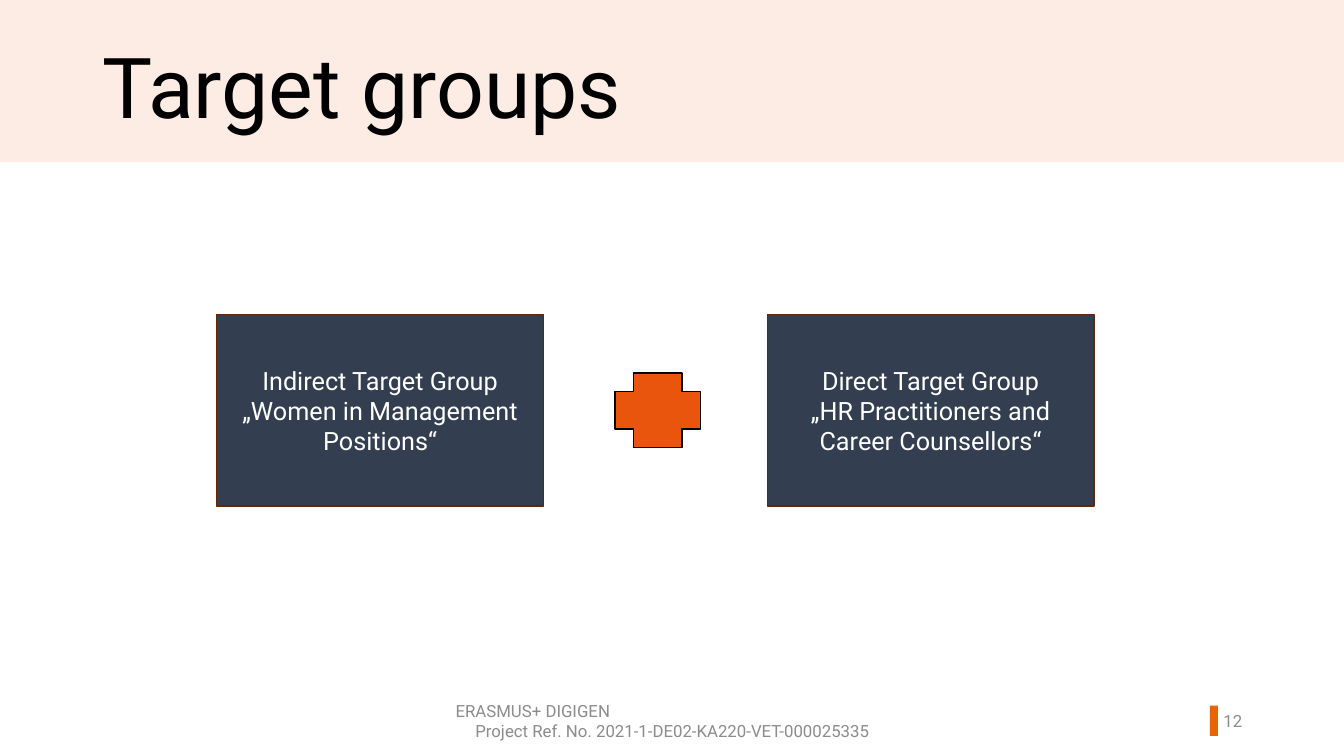
from pptx import Presentation
from pptx.dml.color import RGBColor
from pptx.enum.shapes import MSO_SHAPE
from pptx.enum.text import MSO_ANCHOR, MSO_AUTO_SIZE, PP_ALIGN
from pptx.util import Inches, Pt

RECT, PLUS = MSO_SHAPE.RECTANGLE, MSO_SHAPE.CROSS
TOP, MIDDLE = MSO_ANCHOR.TOP, MSO_ANCHOR.MIDDLE
LEFT, CENTER, RIGHT = PP_ALIGN.LEFT, PP_ALIGN.CENTER, PP_ALIGN.RIGHT
FIXED = MSO_AUTO_SIZE.NONE
FONT = "Roboto"
COLORS = {
    "band": "FDECE3", "mark": "E86507", "gray": "8C8C8C", "black": "000000",
    "white": "FFFFFF", "navy": "333F50", "brown": "662506", "plus": "E9550D",
}


def color(name):
    return RGBColor.from_string(COLORS[name])


def write(frame, lines, size, tint, anchor=MIDDLE):
    """Fill a text frame with one paragraph per (text, alignment) pair."""
    frame.word_wrap = True
    frame.auto_size = FIXED
    frame.vertical_anchor = anchor
    for i, (text, align) in enumerate(lines):
        para = frame.paragraphs[0] if i == 0 else frame.add_paragraph()
        para.alignment = align
        run = para.add_run()
        run.text = text
        run.font.name = FONT
        run.font.size = Pt(size)
        run.font.color.rgb = color(tint)


def add_shape(slide, kind, box, fill, line=None):
    shape = slide.shapes.add_shape(kind, *map(Inches, box))
    shape.shadow.inherit = False
    shape.fill.solid()
    shape.fill.fore_color.rgb = color(fill)
    if line:
        shape.line.color.rgb = color(line)
        shape.line.width = Pt(1)
    else:
        shape.line.fill.background()
    return shape


def add_title(slide, text):
    title = slide.shapes.title
    title.left, title.top = Inches(0.92), Inches(0.41)
    title.width, title.height = Inches(9.93), Inches(0.85)
    write(title.text_frame, [(text, LEFT)], 60, "black", TOP)
    title.text_frame.paragraphs[0].line_spacing = 0.9


def add_note(slide, box, lines):
    note = slide.shapes.add_textbox(*map(Inches, box))
    write(note.text_frame, lines, 12, "gray")


def add_group(slide, left, lines):
    card = add_shape(slide, RECT, (left, 3.12, 3.24, 1.9), "navy", "brown")
    write(card.text_frame, [(line, CENTER) for line in lines], 18, "white")


def main():
    deck = Presentation()
    deck.slide_width, deck.slide_height = Inches(13.33), Inches(7.5)
    slide = deck.slides.add_slide(deck.slide_layouts[5])

    band = add_shape(slide, RECT, (0, 0, 13.33, 1.61), "band")
    slide.shapes.title.element.addprevious(band.element)
    add_title(slide, "Target groups")

    add_shape(slide, RECT, (12, 7, 0.08, 0.3), "mark")
    add_note(slide, (11.77, 6.95, 0.65, 0.4), [("12", RIGHT)])
    add_note(slide, (4.42, 6.95, 4.5, 0.4), [
        ("ERASMUS+ DIGIGEN", LEFT),
        ("Project Ref. No. 2021-1-DE02-KA220-VET-000025335", CENTER),
    ])

    add_group(slide, 2.15, ["Indirect Target Group",
                            "„Women in Management Positions“"])
    add_group(slide, 7.61, ["Direct Target Group",
                            "„HR Practitioners and Career Counsellors“"])
    add_shape(slide, PLUS, (6.1, 3.7, 0.85, 0.74), "plus", "black")

    deck.save("out.pptx")


if __name__ == "__main__":
    main()
